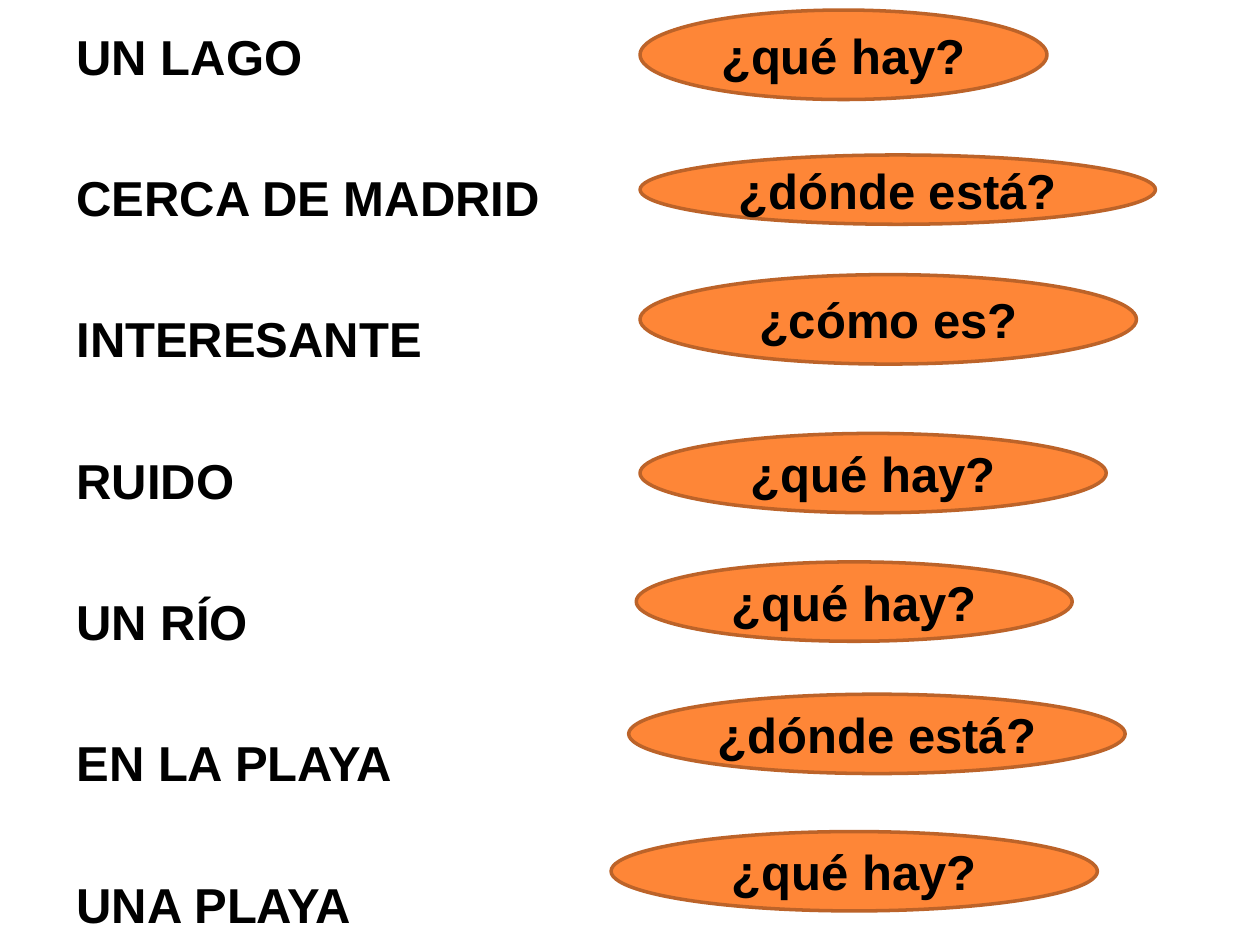
import pptx
import pptx.dml.color
import pptx.enum.shapes
import pptx.enum.text
import pptx.util

COLUMNS, ROWS = 100, 75
ANSWERS = ["UN LAGO", "CERCA DE MADRID", "INTERESANTE", "RUIDO",
           "UN RÍO", "EN LA PLAYA", "UNA PLAYA"]
# question, left column, top row, columns wide, rows high
QUESTIONS = [
    ("¿qué hay?", 50.8, 0.8, 32.3, 7.1),
    ("¿dónde está?", 50.8, 12.3, 40.9, 5.5),
    ("¿cómo es?", 50.8, 21.8, 39.4, 7.1),
    ("¿qué hay?", 50.8, 34.4, 37, 6.3),
    ("¿qué hay?", 50.5, 44.6, 34.6, 6.3),
    ("¿dónde está?", 49.9, 55.1, 39.4, 6.3),
    ("¿qué hay?", 48.5, 66, 38.6, 6.3),
]


def color(hex_string):
    return pptx.dml.color.RGBColor.from_string(hex_string)


def write(para, text, font="Arial", size=28, bold=True, fill="000000",
          align=pptx.enum.text.PP_ALIGN.LEFT, space_before=0):
    para.alignment = align
    para.space_before = pptx.util.Pt(space_before)
    span = para.add_run()
    span.text = text
    span.font.name = font
    span.font.size = pptx.util.Pt(size)
    span.font.bold = bold
    span.font.color.rgb = color(fill)


class QuizSlide:
    fill = "FE8637"
    outline = "BC6329"
    answer_gap = 47.1

    def __init__(self, deck):
        self.page = deck.slides.add_slide(deck.slide_layouts[6])
        self.column = deck.slide_width / COLUMNS
        self.row = deck.slide_height / ROWS

    def place(self, left, top, width, height):
        """Turn grid columns and rows into slide lengths."""
        return (round(left * self.column), round(top * self.row),
                round(width * self.column), round(height * self.row))

    def answer_list(self, answers, *area):
        box = self.page.shapes.add_textbox(*self.place(*area))
        frame = box.text_frame
        frame.word_wrap = True
        frame.margin_top = pptx.util.Inches(0.08)
        for index, answer in enumerate(answers):
            para = frame.add_paragraph() if index else frame.paragraphs[0]
            write(para, answer, space_before=self.answer_gap if index else 0)

    def question_oval(self, question, *area):
        oval = self.page.shapes.add_shape(
            pptx.enum.shapes.MSO_SHAPE.OVAL, *self.place(*area))
        oval.shadow.inherit = False
        oval.fill.solid()
        oval.fill.fore_color.rgb = color(self.fill)
        oval.line.color.rgb = color(self.outline)
        oval.line.width = pptx.util.Pt(2)
        frame = oval.text_frame
        frame.word_wrap = True
        frame.vertical_anchor = pptx.enum.text.MSO_ANCHOR.MIDDLE
        write(frame.paragraphs[0], question,
              align=pptx.enum.text.PP_ALIGN.CENTER)


def main():
    deck = pptx.Presentation()
    deck.slide_width = pptx.util.Inches(10)
    deck.slide_height = pptx.util.Inches(7.5)
    quiz = QuizSlide(deck)
    quiz.answer_list(ANSWERS, 5.1, 1.3, 86.6, 71.7)
    for question in QUESTIONS:
        quiz.question_oval(*question)
    deck.save("out.pptx")


if __name__ == "__main__":
    main()
